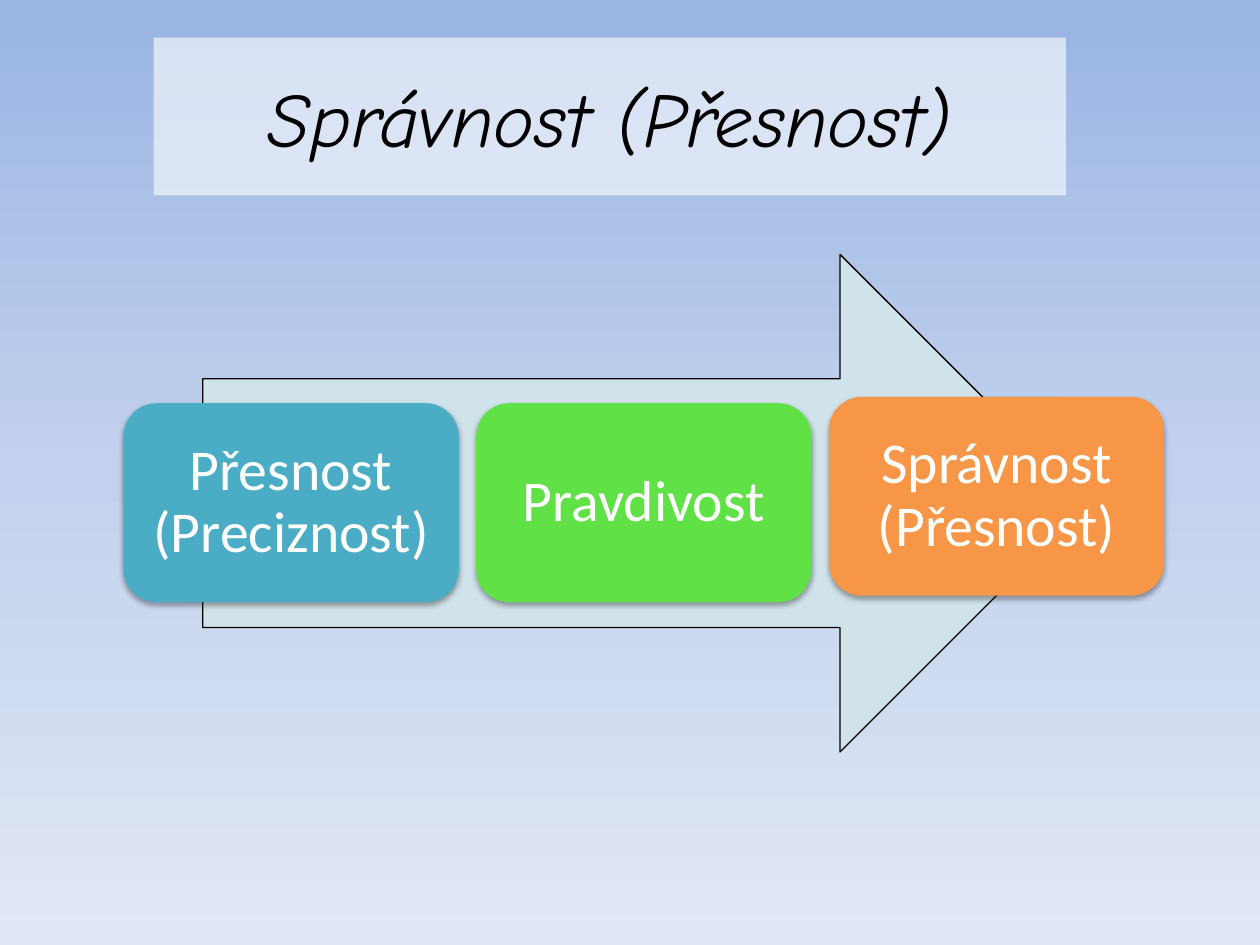
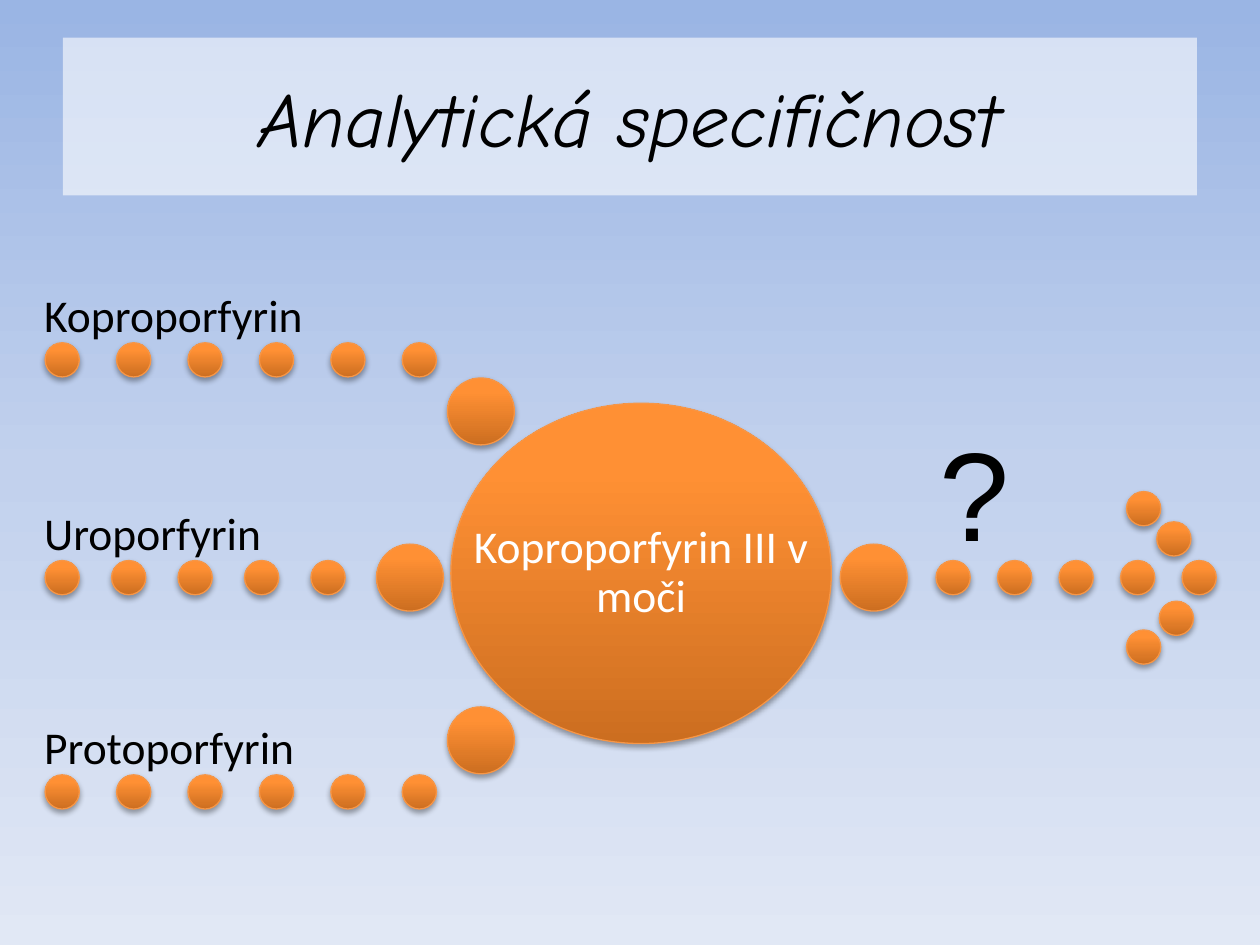
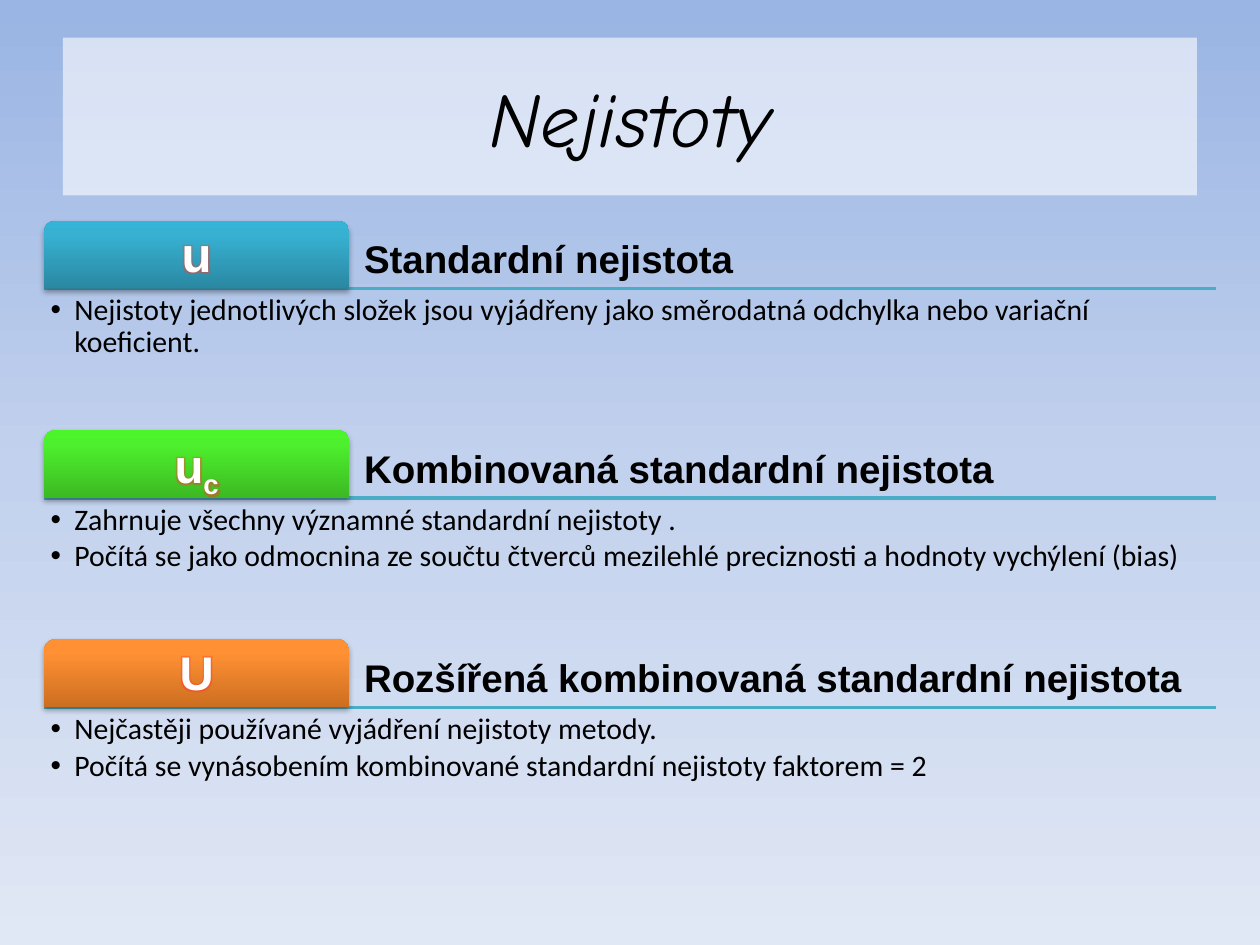
from lxml.etree import SubElement
from pptx import Presentation
from pptx.dml.color import RGBColor
from pptx.enum.shapes import MSO_CONNECTOR as LINE, MSO_SHAPE as SHAPE
from pptx.enum.text import MSO_ANCHOR as ANCHOR, PP_ALIGN as ALIGN
from pptx.oxml import parse_xml
from pptx.oxml.ns import nsdecls, qn
from pptx.util import Cm, Pt

COLORS = {
    "black": "000000", "white": "FFFFFF", "arrow": "D0E3EA",
    "teal": "4BACC6", "green": "60E146", "orange": "F79646", "glow": "FF3C28",
}
GRADIENTS = {
    "sky": [(0, "9AB5E4"), (50, "C2D1ED"), (100, "E1E8F5")],
    "teal": [(0, "2A88A2"), (80, "37B1D2"), (100, "34B4D6")],
    "green": [(0, "3CB923"), (80, "4EF02E"), (100, "4CF52A")],
    "orange": [(0, "CC6E20"), (80, "FF9034"), (100, "FF9136")],
}
DOT, BIG_DOT = 0.69, 1.35
MARGIN = 0.89


def rgb(name):
    """Return the named colour."""
    return RGBColor.from_string(COLORS[name])


def set_gradient(fill, element, name, angle):
    """Fill with a named gradient at a counter-clockwise angle."""
    fill.gradient()
    fill.gradient_angle = angle
    stops = next(element.iter(qn("a:gsLst")))
    stops.clear()
    for pos, color in GRADIENTS[name]:
        stop = SubElement(stops, qn("a:gs"), pos=str(pos * 1000))
        SubElement(stop, qn("a:srgbClr"), val=color)


def add_slide(prs, title, x=1.27, w=22.86):
    """Add a slide with the sky background and its title band."""
    s = prs.slides.add_slide(prs.slide_layouts[6])
    set_gradient(s.background.fill, s.element, "sky", 270)
    sp = add_text(s, x, 0.76, w, 3.18, [title], 44, "Comic Neue",
                  align=ALIGN.CENTER, anchor=ANCHOR.MIDDLE, spacing=1)
    sp.text_frame.paragraphs[0].runs[0].font.italic = True
    sp.fill.solid()
    sp.fill.fore_color.rgb = rgb("white")
    color = next(sp.element.spPr.iter(qn("a:srgbClr")))
    SubElement(color, qn("a:alpha"), val="60000")
    return s


def write(sp, lines, size, font="Calibri", color="black", align=ALIGN.LEFT,
          anchor=ANCHOR.TOP, inset=0.13, spacing=0.9, bold=False, bullets=False):
    """Write paragraphs of one style into a shape."""
    tf = sp.text_frame
    tf.word_wrap = True
    tf.vertical_anchor = anchor
    tf.margin_left = tf.margin_right = tf.margin_top = tf.margin_bottom = Cm(inset)
    tf.text = "\n".join(lines)
    for p in tf.paragraphs:
        p.alignment = align
        p.line_spacing = spacing
        if bullets:
            p.space_after = Pt(2.55)
            add_bullet(p)
        for r in p.runs:
            style_run(r, size, font, color, bold)


def style_run(r, size, font, color, bold):
    """Set the font of a run."""
    r.font.size = Pt(size)
    r.font.name = font
    r.font.bold = bold
    r.font.color.rgb = rgb(color)


def add_bullet(p):
    """Give a paragraph a hanging round bullet."""
    ppr = p._p.get_or_add_pPr()
    ppr.set("marL", str(Cm(0.48)))
    ppr.set("indent", str(-Cm(0.48)))
    SubElement(ppr, qn("a:buFont"), typeface="Arial")
    SubElement(ppr, qn("a:buChar"), char="•")


def add_text(s, x, y, w, h, lines, size, font="Calibri", **style):
    """Add a text box."""
    sp = s.shapes.add_textbox(Cm(x), Cm(y), Cm(w), Cm(h))
    write(sp, lines, size, font, **style)
    return sp


def add_shape(s, kind, x, y, w, h, fill=None, gradient=None, line=None, shadow=True):
    """Add a preset shape with a flat or gradient fill."""
    sp = s.shapes.add_shape(kind, Cm(x), Cm(y), Cm(w), Cm(h))
    if gradient:
        set_gradient(sp.fill, sp.element.spPr, gradient, 90)
    else:
        sp.fill.solid()
        sp.fill.fore_color.rgb = rgb(fill)
    if line:
        sp.line.color.rgb = rgb(line)
        sp.line.width = Pt(0.75)
    else:
        sp.line.fill.background()
    sp.shadow.inherit = False
    if shadow:
        sp.element.spPr.find(qn("a:effectLst")).append(parse_xml(
            f'<a:outerShdw {nsdecls("a")} blurRad="40000" dist="23000" dir="5400000" '
            'rotWithShape="0"><a:srgbClr val="000000"><a:alpha val="35000"/>'
            '</a:srgbClr></a:outerShdw>'))
    return sp


def add_ball(s, x, y, w=DOT, h=None):
    """Add a shaded orange ellipse."""
    return add_shape(s, SHAPE.OVAL, x, y, w, h or w, gradient="orange", line="orange")


def add_dot_row(s, x, y, count, step):
    """Add a row of evenly spaced dots."""
    for i in range(count):
        add_ball(s, x + i * step, y)


def add_rule(s, y):
    """Add a teal line across the content width."""
    c = s.shapes.add_connector(LINE.STRAIGHT, Cm(MARGIN), Cm(y), Cm(24.51), Cm(y))
    c.line.color.rgb = rgb("teal")
    c.line.width = Pt(2)
    SubElement(c._element.spPr, qn("a:effectLst"))


def add_glow(r):
    """Give a run a red glow."""
    r._r.rPr.find(qn("a:solidFill")).addnext(parse_xml(
        f'<a:effectLst {nsdecls("a")}><a:glow rad="45500"><a:srgbClr val="{COLORS["glow"]}">'
        '<a:alpha val="50000"/></a:srgbClr></a:glow></a:effectLst>'))


def add_symbol_tab(s, y, symbol, subscript, size, gradient):
    """Add a tab that holds the symbol of an uncertainty."""
    sp = add_shape(s, SHAPE.ROUND_2_SAME_RECTANGLE, MARGIN, y, 6.15, 1.37, gradient=gradient)
    sp.adjustments[0], sp.adjustments[1] = 0.17, 0
    write(sp, [symbol], size, "Arial", color="white", align=ALIGN.CENTER,
          anchor=ANCHOR.MIDDLE, inset=0.15, bold=True)
    p = sp.text_frame.paragraphs[0]
    if subscript:
        r = p.add_run()
        r.text = subscript
        style_run(r, size, "Arial", "white", True)
        r._r.rPr.set("baseline", "-25000")
    for r in p.runs:
        add_glow(r)


def add_section(s, y, symbol, subscript, size, gradient, heading, points):
    """Add a symbol tab with its heading and bullet points."""
    base = y + 1.37
    add_rule(s, base)
    sp = add_text(s, 7.04, y, 17.48, 1.37, [heading], 22, "Arial",
                  anchor=ANCHOR.BOTTOM, bold=True)
    sp.text_frame.margin_left = Cm(0.3)
    add_symbol_tab(s, y, symbol, subscript, size, gradient)
    add_text(s, MARGIN, base, 23.6, 2.77, points, 17, bullets=True)


def build_accuracy(prs):
    """Build the slide on accuracy."""
    s = add_slide(prs, "Správnost (Přesnost)", 3.1, 18.39)
    add_shape(s, SHAPE.RIGHT_ARROW, 4.09, 5.13, 17.86, 10.03,
              fill="arrow", line="black", shadow=False)
    cards = [("Přesnost (Preciznost)", "teal", 8.13), ("Pravdivost", "green", 8.13),
             ("Správnost (Přesnost)", "orange", 8)]
    for i, (text, color, y) in enumerate(cards):
        sp = add_shape(s, SHAPE.ROUNDED_RECTANGLE, 2.49 + i * 7.11, y, 6.76, 4.01, fill=color)
        write(sp, [text], 33, color="white", align=ALIGN.CENTER,
              anchor=ANCHOR.MIDDLE, inset=0.16)


def build_specificity(prs):
    """Build the slide on analytical specificity."""
    s = add_slide(prs, "Analytická specifičnost")
    add_dot_row(s, 18.87, 11.3, 5, 1.24)
    for x, y in [(22.71, 9.91), (23.32, 10.52), (23.37, 12.12), (22.71, 12.7)]:
        add_ball(s, x, y)
    add_ball(s, 16.94, 10.97, BIG_DOT)
    center = (9.09, 8.13, 7.67, 6.86)
    add_ball(s, *center)
    add_text(s, *center, ["Koproporfyrin III v moči"], 26, color="white",
             align=ALIGN.CENTER, anchor=ANCHOR.MIDDLE, inset=0.1)
    inputs = [("Koproporfyrin", 6.91, 6, 1.44, (9.02, 7.62)),
              ("Uroporfyrin", 11.3, 5, 1.34, (7.59, 10.97)),
              ("Protoporfyrin", 15.62, 6, 1.44, (9.02, 14.25))]
    for label, y, count, step, joint in inputs:
        add_ball(s, *joint, BIG_DOT)
        add_dot_row(s, 0.91, y, count, step)
        add_text(s, MARGIN, y - 1.75, count * step - DOT, 1.75, [label], 26,
                 anchor=ANCHOR.BOTTOM, inset=0)
    add_text(s, 18.69, 8.13, 3, 3.33, ["?"], 72, "Arial", inset=0.25, spacing=1)


def build_uncertainty(prs):
    """Build the slide on uncertainties."""
    s = add_slide(prs, "Nejistoty")
    sections = [
        ("u", "", 28, "teal", "Standardní nejistota",
         ["Nejistoty jednotlivých složek jsou vyjádřeny jako směrodatná odchylka "
          "nebo variační koeficient."]),
        ("u", "c", 27, "green", "Kombinovaná standardní nejistota",
         ["Zahrnuje všechny významné standardní nejistoty .",
          "Počítá se jako odmocnina ze součtu čtverců mezilehlé preciznosti "
          "a hodnoty vychýlení (bias)"]),
        ("U", "", 27, "orange", "Rozšířená kombinovaná standardní nejistota",
         ["Nejčastěji používané vyjádření nejistoty metody.",
          "Počítá se vynásobením kombinované standardní nejistoty faktorem = 2"]),
    ]
    for i, section in enumerate(sections):
        add_section(s, 4.45 + i * 4.22, *section)


def main():
    """Build and save the presentation."""
    prs = Presentation()
    prs.slide_width, prs.slide_height = Cm(25.4), Cm(19.05)
    build_accuracy(prs)
    build_specificity(prs)
    build_uncertainty(prs)
    prs.save("out.pptx")


if __name__ == "__main__":
    main()
